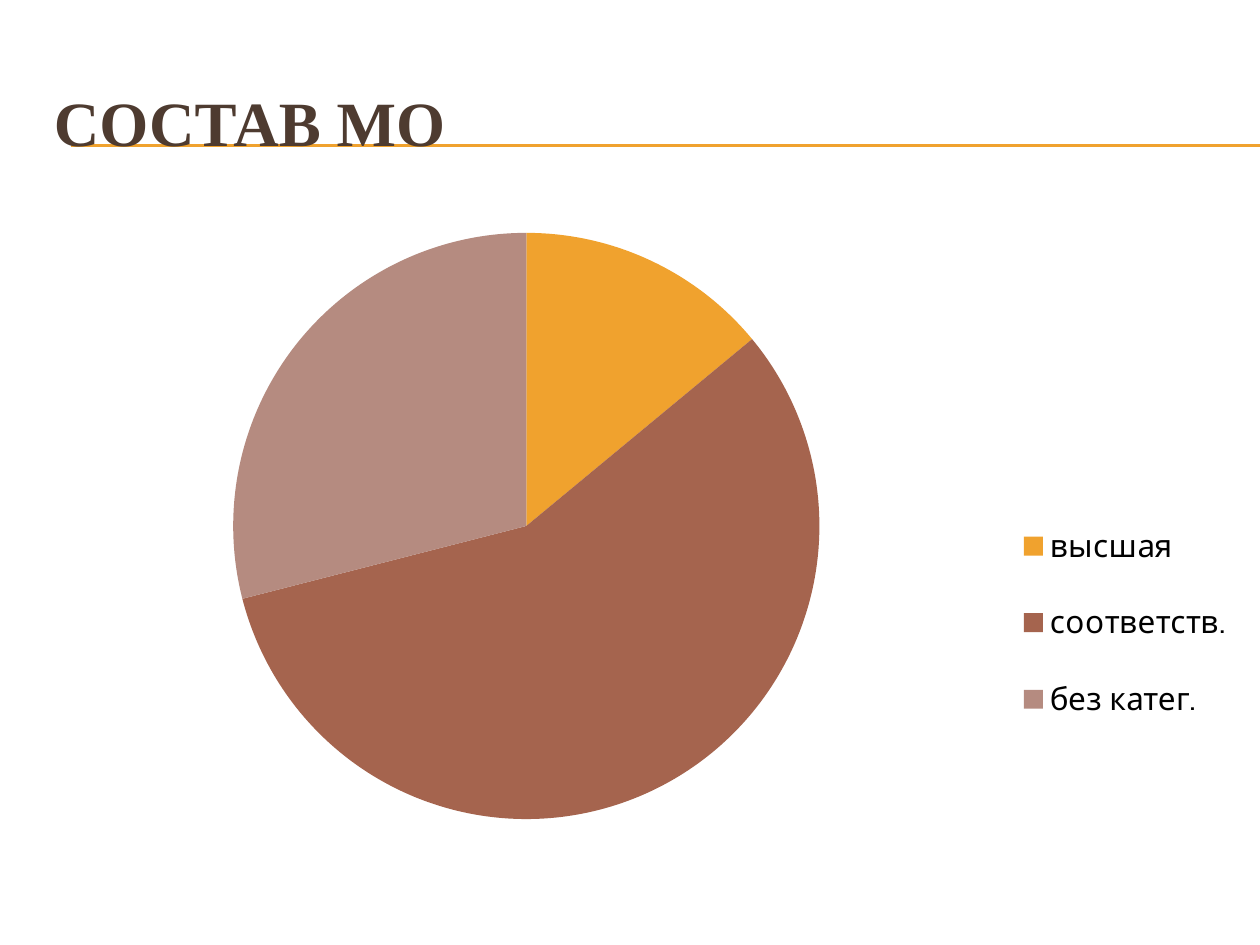
import lxml.etree
import pptx
import pptx.chart.data
import pptx.dml.color
import pptx.enum.chart
import pptx.enum.shapes
import pptx.enum.text
import pptx.oxml
import pptx.oxml.ns
import pptx.util
from pptx.util import Inches

GOLD, RUST, ROSE = "F0A22E", "A5644E", "B58B80"
BROWN, BLACK, WHITE = "4E3B30", "000000", "FFFFFF"


def color(hex_string):
    return pptx.dml.color.RGBColor.from_string(hex_string)


def add_rule(slide, left, top, width):
    rule = slide.shapes.add_connector(
        pptx.enum.shapes.MSO_CONNECTOR.STRAIGHT, left, top, left + width, top)
    rule.line.color.rgb = color(GOLD)
    rule.line.width = pptx.util.Pt(0.75)
    lxml.etree.SubElement(rule._element.spPr, pptx.oxml.ns.qn("a:effectLst"))


def add_title(slide, left, top, width, height):
    title = slide.shapes.add_textbox(left, top, width, height).text_frame
    title.word_wrap = True
    title.vertical_anchor = pptx.enum.text.MSO_ANCHOR.MIDDLE
    heading = title.paragraphs[0].add_run()
    heading.text = "СОСТАВ МО"
    heading.font.name = "Times New Roman"
    heading.font.size = pptx.util.Pt(36)
    heading.font.bold = True
    heading.font.color.rgb = color(BROWN)


def set_layout(part, x, y, w, h, inner=False):
    """Place a plot area or legend by fractions of the chart box."""
    for old_layout in part.findall(pptx.oxml.ns.qn("c:layout")):
        part.remove(old_layout)
    target = '<c:layoutTarget val="inner"/>' if inner else ""
    sizes = "".join(f'<c:{tag} val="{value}"/>'
                    for tag, value in zip("xywh", (x, y, w, h)))
    layout = pptx.oxml.parse_xml(
        f'<c:layout {pptx.oxml.ns.nsdecls("c")}><c:manualLayout>{target}'
        f'<c:xMode val="edge"/><c:yMode val="edge"/>{sizes}'
        '</c:manualLayout></c:layout>')
    # In a legend the layout follows c:legendPos; in a plot area it comes first.
    part.insert(0 if inner else 1, layout)


def add_category_pie(slide, left, top, width, height):
    shares = pptx.chart.data.CategoryChartData()
    shares.categories = ["высшая", "соответств.", "без катег."]
    shares.add_series("Series 1", (14, 57, 29))
    pie = slide.shapes.add_chart(
        pptx.enum.chart.XL_CHART_TYPE.PIE, left, top, width, height, shares).chart
    pie.has_title = False
    pie.font.name = "Cabin"
    pie.font.size = pptx.util.Pt(18)
    pie.font.color.rgb = color(BLACK)

    plot = pie.plots[0]
    plot.vary_by_categories = True
    for index, slice_color in enumerate((GOLD, RUST, ROSE)):
        fill = plot.series[0].points[index].format.fill
        fill.solid()
        fill.fore_color.rgb = color(slice_color)

    pie.has_legend = True
    pie.legend.position = pptx.enum.chart.XL_LEGEND_POSITION.RIGHT
    pie.legend.include_in_layout = False
    set_layout(pie._chartSpace.chart.plotArea, 0.16, 0.03, 0.49, 0.94, inner=True)
    set_layout(pie.legend._element, 0.81, 0.44, 0.19, 0.43)


def main():
    deck = pptx.Presentation()
    deck.slide_width, deck.slide_height = Inches(10), Inches(7.5)
    slide = deck.slides.add_slide(deck.slide_layouts[6])
    slide.background.fill.solid()
    slide.background.fill.fore_color.rgb = color(WHITE)
    for top in (1.15, 1.16):
        add_rule(slide, Inches(0.56), Inches(top), Inches(9.44))
    add_title(slide, Inches(0.33), Inches(0.5), Inches(9.5), Inches(0.92))
    add_category_pie(slide, Inches(0.33), Inches(1.7), Inches(9.5), Inches(4.95))
    deck.save("out.pptx")


if __name__ == "__main__":
    main()
